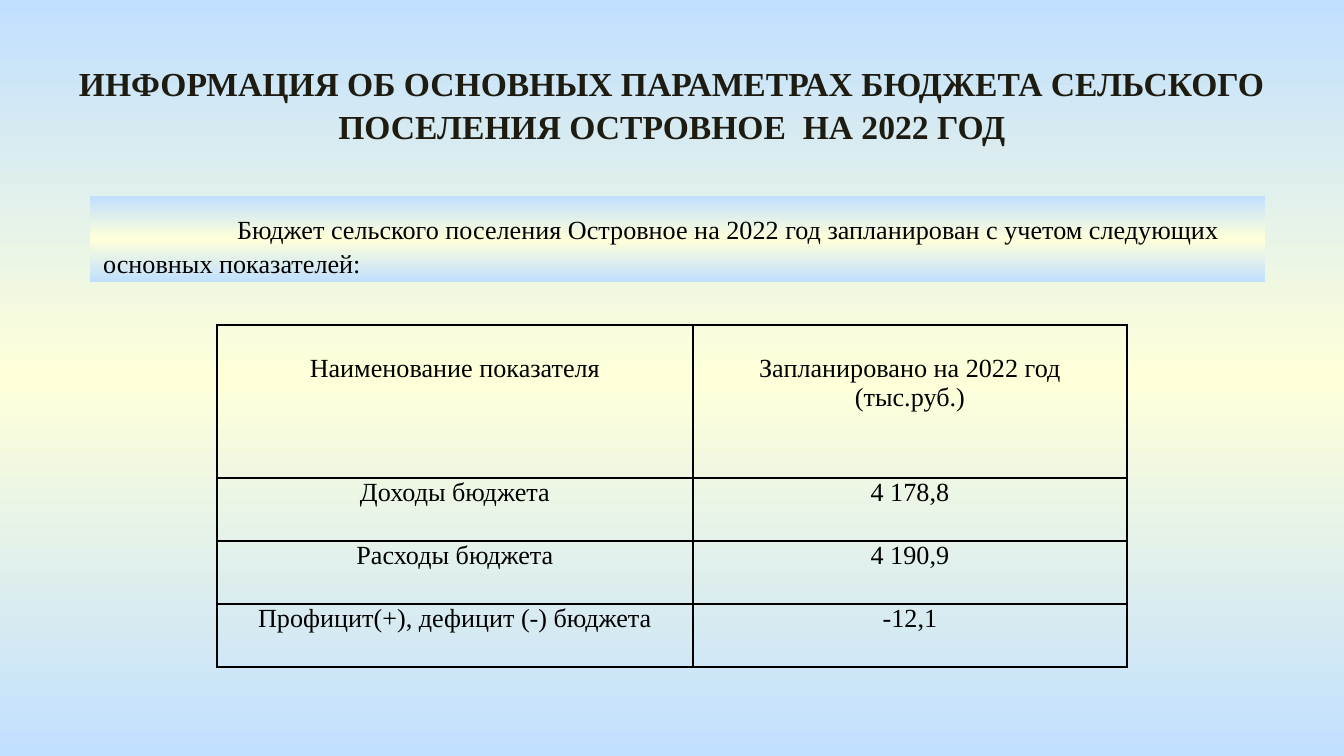
from copy import deepcopy

from lxml.etree import SubElement
from pptx import Presentation
from pptx.dml.color import RGBColor
from pptx.enum.shapes import MSO_SHAPE as Shape
from pptx.enum.text import MSO_ANCHOR as Anchor, MSO_AUTO_SIZE as AutoSize, PP_ALIGN as Align
from pptx.oxml.ns import qn
from pptx.util import Emu, Pt

SLIDE_W, SLIDE_H = 1344, 756
EMU_PER_PX = 9144000 / SLIDE_W
FONT = "Times New Roman"
BLACK, TITLE_INK = "000000", "1E1C11"
SKY, CREAM = "C1E0FF", "FFFFD9"

BUDGET_ROWS = [
    ("Наименование показателя", "Запланировано на 2022 год (тыс.руб.)"),
    ("Доходы бюджета", "4 178,8"),
    ("Расходы бюджета", "4 190,9"),
    ("Профицит(+), дефицит (-) бюджета", "-12,1"),
]
COLUMN_WIDTHS = (476, 434)
HEADER_H, ROW_H = 153, 63


def px(length):
    return Emu(round(length * EMU_PER_PX))


def color(hex_code):
    return RGBColor.from_string(hex_code)


def place(shape, left, top, width, height):
    shape.left, shape.top = px(left), px(top)
    shape.width, shape.height = px(width), px(height)


def fill_sky_gradient(fill, owner):
    """Vertical gradient: sky, cream in the middle, sky again."""
    fill.gradient()
    fill.gradient_angle = 90
    for stop in fill.gradient_stops:
        stop.color.rgb = color(SKY)
    first = next(owner.iter(qn("a:gs")))
    middle = deepcopy(first)
    middle.set("pos", "50000")
    middle.find(qn("a:srgbClr")).set("val", CREAM)
    first.addnext(middle)


def add_run(paragraph, text, size, ink=BLACK, bold=False):
    run = paragraph.add_run()
    run.text = text
    run.font.name, run.font.size, run.font.bold = FONT, Pt(size), bold
    run.font.color.rgb = color(ink)


def set_up_frame(frame, margin_top):
    frame.word_wrap = True
    frame.auto_size = AutoSize.NONE
    frame.vertical_anchor = Anchor.TOP
    frame.margin_top = px(margin_top)
    return frame.paragraphs[0]


def add_title(slide, text):
    title = slide.shapes.title
    place(title, 47, 52, 1250, 95)
    paragraph = set_up_frame(title.text_frame, 9)
    paragraph.alignment = Align.CENTER
    paragraph.line_spacing = 1.06
    add_run(paragraph, text, 18, TITLE_INK, bold=True)


def add_intro(slide, text):
    intro = slide.shapes.add_shape(Shape.RECTANGLE, px(90), px(196), px(1175), px(86))
    intro.shadow.inherit = False
    intro.line.fill.background()
    fill_sky_gradient(intro.fill, intro.element)
    paragraph = set_up_frame(intro.text_frame, 14)
    paragraph.alignment = Align.LEFT
    paragraph.line_spacing = 1.1
    # First-line indent
    paragraph.font.size = Pt(14)
    paragraph._p.get_or_add_pPr().set("indent", str(px(134)))
    add_run(paragraph, text, 14)


def add_borders(cell):
    properties = cell._tc.get_or_add_tcPr()
    for position, side in enumerate(("lnL", "lnR", "lnT", "lnB")):
        line = SubElement(properties, qn(f"a:{side}"), w=str(Pt(1)))
        ink = SubElement(SubElement(line, qn("a:solidFill")), qn("a:srgbClr"))
        ink.set("val", BLACK)
        properties.insert(position, line)


def fill_cell(cell, text, margin_top):
    cell.fill.background()
    add_borders(cell)
    cell.margin_left = cell.margin_right = px(10)
    cell.margin_top, cell.margin_bottom = px(margin_top), px(0)
    paragraph = cell.text_frame.paragraphs[0]
    paragraph.alignment = Align.CENTER
    add_run(paragraph, text, 14)


def add_budget_table(slide):
    heights = [HEADER_H] + [ROW_H] * (len(BUDGET_ROWS) - 1)
    table = slide.shapes.add_table(
        len(BUDGET_ROWS), len(COLUMN_WIDTHS),
        px(217), px(325), px(sum(COLUMN_WIDTHS)), px(sum(heights)),
    ).table
    table.first_row = table.horz_banding = False
    for column, width in zip(table.columns, COLUMN_WIDTHS):
        column.width = px(width)
    for index, (row, height, texts) in enumerate(zip(table.rows, heights, BUDGET_ROWS)):
        row.height = px(height)
        for cell, text in zip(row.cells, texts):
            fill_cell(cell, text, margin_top=29 if index == 0 else 0)


def main():
    deck = Presentation()
    deck.slide_width, deck.slide_height = px(SLIDE_W), px(SLIDE_H)
    slide = deck.slides.add_slide(deck.slide_layouts[5])

    # Background
    fill_sky_gradient(slide.background.fill, slide.element)

    # Heading and introduction
    add_title(slide, "ИНФОРМАЦИЯ ОБ ОСНОВНЫХ ПАРАМЕТРАХ БЮДЖЕТА СЕЛЬСКОГО "
                     "ПОСЕЛЕНИЯ ОСТРОВНОЕ  НА 2022 ГОД")
    add_intro(slide, "Бюджет сельского поселения Островное на 2022 год "
                     "запланирован с учетом следующих основных показателей:")

    # Planned figures
    add_budget_table(slide)
    deck.save("out.pptx")


if __name__ == "__main__":
    main()
